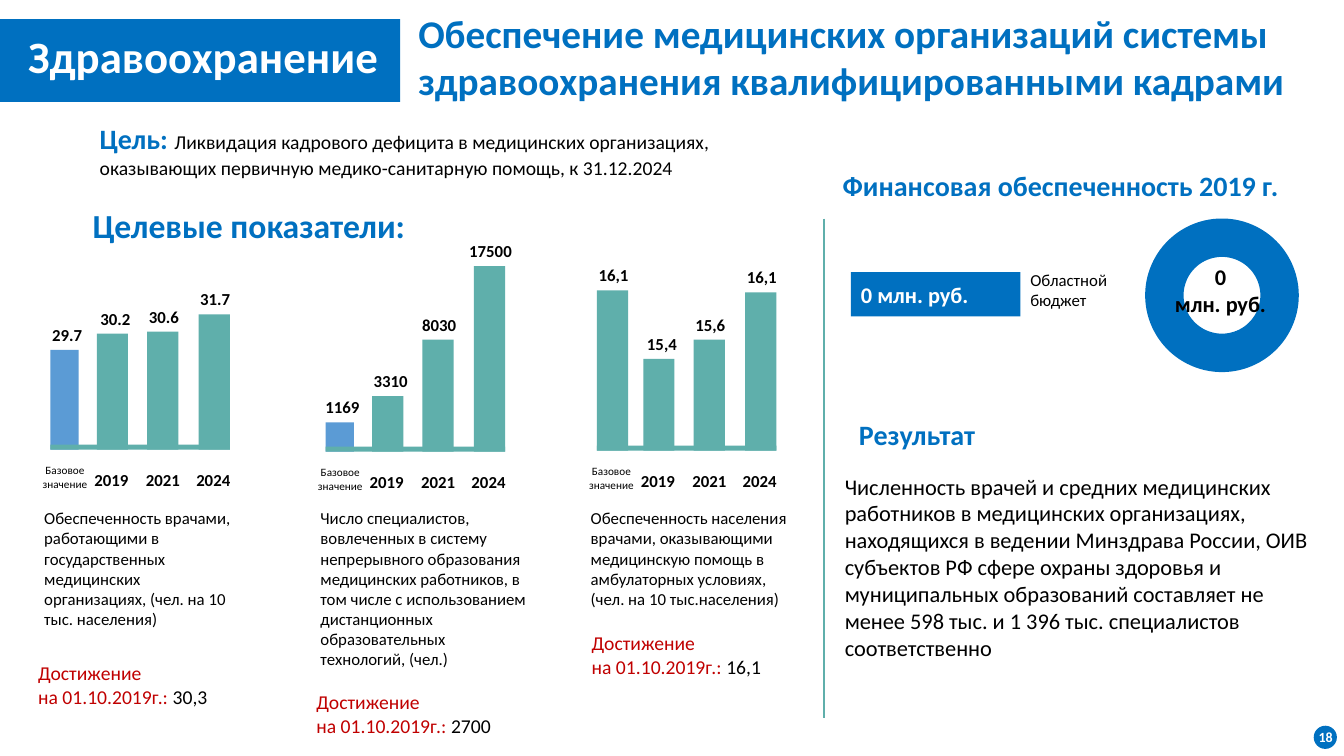
from lxml import etree
from pptx import Presentation
from pptx.chart.data import CategoryChartData
from pptx.dml.color import RGBColor
from pptx.enum.chart import XL_CHART_TYPE
from pptx.enum.shapes import MSO_CONNECTOR, MSO_SHAPE
from pptx.enum.text import PP_ALIGN
from pptx.oxml.ns import qn
from pptx.util import Inches, Pt

RECT, OVAL = MSO_SHAPE.RECTANGLE, MSO_SHAPE.OVAL
DOUGHNUT = XL_CHART_TYPE.DOUGHNUT
STRAIGHT = MSO_CONNECTOR.STRAIGHT
LEFT, CENTER = PP_ALIGN.LEFT, PP_ALIGN.CENTER
FONT = "Calibri"
COLORS = {
    "blue": "0070C0",
    "light_blue": "5B9BD5",
    "teal": "5FAFAB",
    "red": "C00000",
    "black": "000000",
    "white": "FFFFFF",
}

prs = Presentation()
prs.slide_width, prs.slide_height = Inches(13.33), Inches(7.5)
slide = prs.slides.add_slide(prs.slide_layouts[6])


def rgb(name):
    return RGBColor.from_string(COLORS[name])


def add_text(text, x, y, w, h, size=12, color="black", bold=False, align=LEFT,
             tail="", tail_size=None):
    """Add a text box; "\\n" breaks the line, tail is a plain black run at the end."""
    tf = slide.shapes.add_textbox(Inches(x), Inches(y), Inches(w), Inches(h)).text_frame
    tf.word_wrap = True
    p = tf.paragraphs[0]
    p.alignment = align
    runs = [(line, size, color, bold) for line in text.split("\n")]
    if tail:
        runs.append((tail, tail_size or size, "black", False))
    for i, (words, points, tint, heavy) in enumerate(runs):
        if 0 < i <= text.count("\n"):
            p.add_line_break()
        r = p.add_run()
        r.text = words
        r.font.name, r.font.size, r.font.bold = FONT, Pt(points), heavy
        r.font.color.rgb = rgb(tint)


def add_block(kind, x, y, w, h, color):
    sp = slide.shapes.add_shape(kind, Inches(x), Inches(y), Inches(w), Inches(h))
    sp.shadow.inherit = False
    sp.fill.solid()
    sp.fill.fore_color.rgb = rgb(color)
    sp.line.fill.background()


# Header and goal
add_block(RECT, 0, 0.19, 3.97, 0.82, "blue")
add_text("Здравоохранение", 0.18, 0.24, 3.92, 0.64, size=32, color="white", bold=True)
add_text("Обеспечение медицинских организаций системы здравоохранения "
         "квалифицированными кадрами",
         4.05, 0.04, 8.98, 1.04, size=28, color="blue", bold=True)
add_text("Цель: ", 0.89, 1.16, 6.98, 0.67, size=20, color="blue", bold=True,
         tail="Ликвидация кадрового дефицита в медицинских организациях, "
              "оказывающих первичную медико-санитарную помощь, к 31.12.2024",
         tail_size=14)

# Target indicators: bars given as (value, top)
add_text("Целевые показатели:", 0.82, 1.98, 3.41, 0.5, size=24, color="blue", bold=True)
indicators = [
    {"left": 0.5, "bottom": 4.46, "base": "light_blue",
     "bars": [("29.7", 3.47), ("30.2", 3.31), ("30.6", 3.29), ("31.7", 3.12)],
     "about": "Обеспеченность врачами, работающими в государственных медицинских "
              "организациях, (чел. на 10 тыс. населения)",
     "about_box": (0.34, 4.99, 2.06, 1.31), "reached": "30,3", "reached_at": (0.28, 6.51)},
    {"left": 3.23, "bottom": 4.48, "base": "light_blue",
     "bars": [("1169", 4.19), ("3310", 3.93), ("8030", 3.37), ("17500", 2.64)],
     "about": "Число специалистов, вовлеченных в систему непрерывного образования "
              "медицинских работников, в том числе с использованием дистанционных "
              "образовательных технологий, (чел.)",
     "about_box": (3.08, 4.99, 2.3, 1.72), "reached": "2700", "reached_at": (3.04, 6.8)},
    {"left": 5.92, "bottom": 4.47, "base": "teal",
     "bars": [("16,1", 2.88), ("15,4", 3.56), ("15,6", 3.37), ("16,1", 2.9)],
     "about": "Обеспеченность населения врачами, оказывающими медицинскую помощь в "
              "амбулаторных условиях, (чел. на 10 тыс.населения)",
     "about_box": (5.76, 4.99, 2.29, 1.11), "reached": "16,1", "reached_at": (5.77, 6.21)},
]
bar_offsets = [0, 0.46, 0.96, 1.47]
label_offsets = [-0.16, 0.32, 0.8, 1.31]
years = [("2019", 0.28), ("2021", 0.79), ("2024", 1.29)]

for ind in indicators:
    left, bottom = ind["left"], ind["bottom"]
    for i, (value, top) in enumerate(ind["bars"]):
        color = "teal" if i else ind["base"]
        width = 0.28 if color == "light_blue" else 0.31
        add_block(RECT, left + bar_offsets[i], top, width, bottom - top, color)
        add_text(value, left + label_offsets[i], top - 0.3, 0.65, 0.3,
                 bold=True, align=CENTER)
    add_block(RECT, left, bottom - 0.05, 1.78, 0.05, "teal")
    add_text("Базовое\nзначение", left - 0.64, bottom + 0.09, 1.57, 0.69,
             size=8, align=CENTER)
    for year, offset in years:
        add_text(year, left + offset, bottom + 0.15, 0.65, 0.57, bold=True, align=CENTER)
    add_text(ind["about"], *ind["about_box"])
    add_text("Достижение\nна 01.10.2019г.: ", *ind["reached_at"], 2.1, 0.57,
             size=14, color="red", tail=ind["reached"])

# Divider
divider = slide.shapes.add_connector(STRAIGHT, Inches(8.17), Inches(2.17),
                                     Inches(8.17), Inches(7.12))
divider.line.color.rgb = rgb("teal")
divider.line.width = Pt(1.5)
etree.SubElement(divider._element.spPr, qn("a:effectLst"))

# Funding
add_text("Финансовая обеспеченность 2019 г.", 8.26, 1.62, 4.71, 0.44,
         size=20, color="blue", bold=True)
add_block(RECT, 8.44, 2.7, 1.68, 0.44, "blue")
add_text("0 млн. руб.", 8.44, 2.74, 1.85, 0.37, size=16, color="white", bold=True)
add_text("Областной бюджет", 10.12, 2.63, 1.51, 0.5)

data = CategoryChartData()
data.categories = ["1", "2", "3", "4"]
data.add_series("Series 1", [100, None, None, None])
chart = slide.shapes.add_chart(DOUGHNUT, Inches(10.77), Inches(2.03),
                               Inches(2.7), Inches(1.8), data).chart
chart.has_legend = False
chart.has_title = False
chart.font.name, chart.font.size = FONT, Pt(10)
chart.font.color.rgb = rgb("black")
plot = chart.plots[0]
plot.vary_by_categories = False
for i in range(4):
    fmt = plot.series[0].points[i].format
    fmt.fill.solid()
    fmt.fill.fore_color.rgb = rgb("blue")
    fmt.line.fill.background()
plot._element.find(qn("c:holeSize")).set("val", "75")
add_text("0\nмлн. руб.", 11.25, 2.56, 1.71, 0.64, size=16, bold=True, align=CENTER)

# Result
add_text("Результат", 8.42, 4.09, 3.41, 0.44, size=20, color="blue", bold=True)
add_text("Численность врачей и средних медицинских работников в медицинских "
         "организациях, находящихся в ведении Минздрава России, ОИВ субъектов РФ "
         "сфере охраны здоровья и муниципальных образований составляет не менее "
         "598 тыс. и 1 396 тыс. специалистов соответственно",
         8.28, 4.64, 4.98, 1.99, size=16)

# Page number
add_block(OVAL, 13.03, 7.2, 0.23, 0.23, "blue")
add_text("18", 12.98, 7.18, 0.44, 0.27, size=10, color="white", bold=True)

prs.save("out.pptx")
